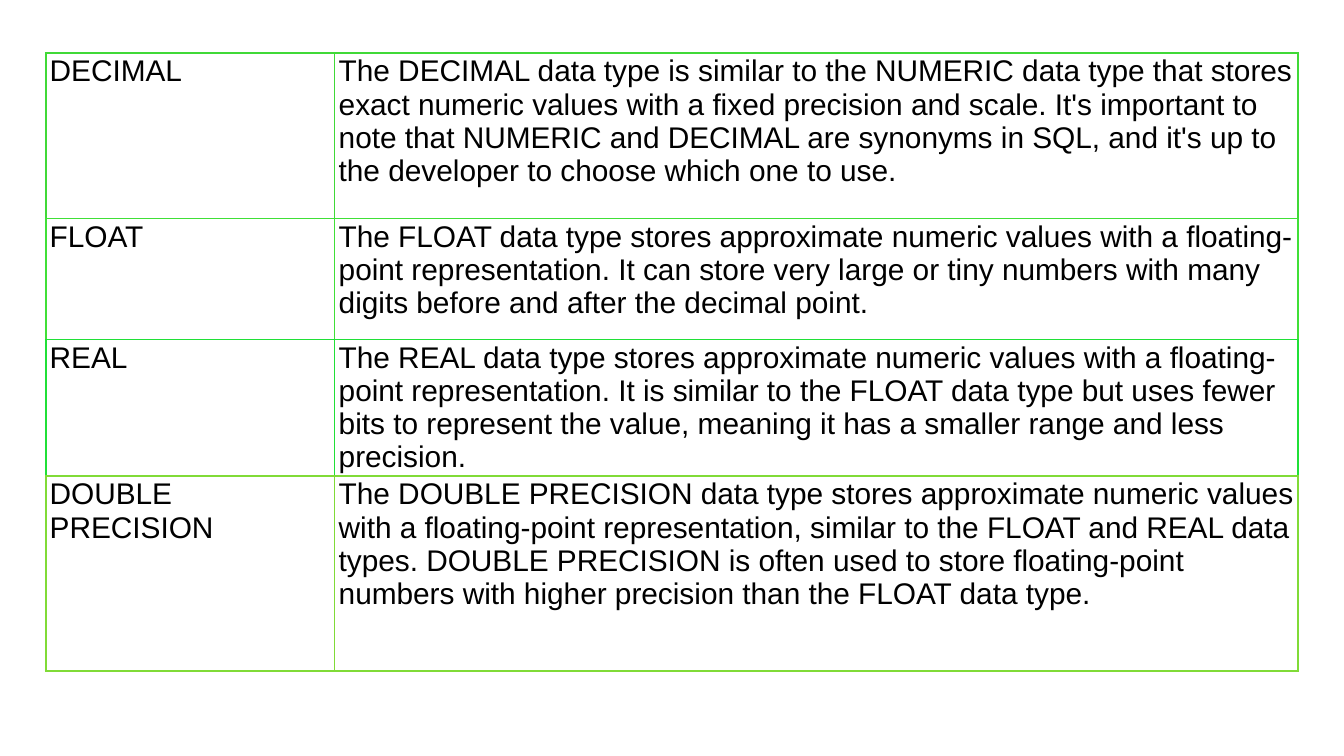
from lxml.etree import SubElement
from pptx import Presentation
from pptx.dml.color import RGBColor
from pptx.oxml.ns import qn
from pptx.util import Pt

PX = 4572
WHITE = RGBColor(0xFF, 0xFF, 0xFF)
BLACK = RGBColor(0x00, 0x00, 0x00)
DECIMAL_GREEN = RGBColor(0x40, 0xD9, 0x37)
FLOAT_GREEN = RGBColor(0x40, 0xE0, 0x37)
REAL_GREEN = RGBColor(0x20, 0xE0, 0x37)
DOUBLE_GREEN = RGBColor(0x80, 0xDB, 0x37)

COLUMN_WIDTHS = [430, 1434]
DATA_TYPES = [
    ("DECIMAL", 246, DECIMAL_GREEN,
     "The DECIMAL data type is similar to the NUMERIC data type that stores "
     "exact numeric values with a fixed precision and scale. It's important to "
     "note that NUMERIC and DECIMAL are synonyms in SQL, and it's up to "
     "the developer to choose which one to use."),
    ("FLOAT", 180, FLOAT_GREEN,
     "The FLOAT data type stores approximate numeric values with a floating-"
     "point representation. It can store very large or tiny numbers with many "
     "digits before and after the decimal point."),
    ("REAL", 198, REAL_GREEN,
     "The REAL data type stores approximate numeric values with a floating-"
     "point representation. It is similar to the FLOAT data type but uses fewer "
     "bits to represent the value, meaning it has a smaller range and less "
     "precision."),
    ("DOUBLE PRECISION", 290, DOUBLE_GREEN,
     "The DOUBLE PRECISION data type stores approximate numeric values "
     "with a floating-point representation, similar to the FLOAT and REAL data "
     "types. DOUBLE PRECISION is often used to store floating-point "
     "numbers with higher precision than the FLOAT data type."),
]
CELL_MARGINS = {
    "margin_left": 6 * PX,
    "margin_right": 6 * PX,
    "margin_top": 3 * PX,
    "margin_bottom": 3 * PX,
}
TEXT_FORMAT = {"name": "Arial", "size": Pt(16), "bold": False}


def add_borders(cell, colors):
    properties = cell._tc.get_or_add_tcPr()
    for side, color in colors.items():
        border = SubElement(properties, qn(f"a:ln{side}"), w=str(Pt(1)))
        fill = SubElement(border, qn("a:solidFill"))
        SubElement(fill, qn("a:srgbClr"), val=str(color))


presentation = Presentation()
presentation.slide_width = 2000 * PX
presentation.slide_height = 1125 * PX
slide = presentation.slides.add_slide(presentation.slide_layouts[6])

total_height = sum(height for _, height, _, _ in DATA_TYPES)
data_types = slide.shapes.add_table(
    len(DATA_TYPES), len(COLUMN_WIDTHS),
    68 * PX, 79 * PX, sum(COLUMN_WIDTHS) * PX, total_height * PX,
).table
data_types.first_row = False
data_types.horz_banding = False

for column, width in zip(data_types.columns, COLUMN_WIDTHS):
    column.width = width * PX

row_colors = [color for _, _, color, _ in DATA_TYPES]
bottom_colors = row_colors[1:] + row_colors[-1:]

for row, data_type, bottom in zip(data_types.rows, DATA_TYPES, bottom_colors):
    type_name, height, green, description = data_type
    row.height = height * PX
    for cell, wording in zip(row.cells, (type_name, description)):
        add_borders(cell, {"L": green, "R": green, "T": green, "B": bottom})
        cell.fill.solid()
        cell.fill.fore_color.rgb = WHITE
        for attribute, value in CELL_MARGINS.items():
            setattr(cell, attribute, value)
        run = cell.text_frame.paragraphs[0].add_run()
        run.text = wording
        run.font.color.rgb = BLACK
        for attribute, value in TEXT_FORMAT.items():
            setattr(run.font, attribute, value)

presentation.save("out.pptx")
